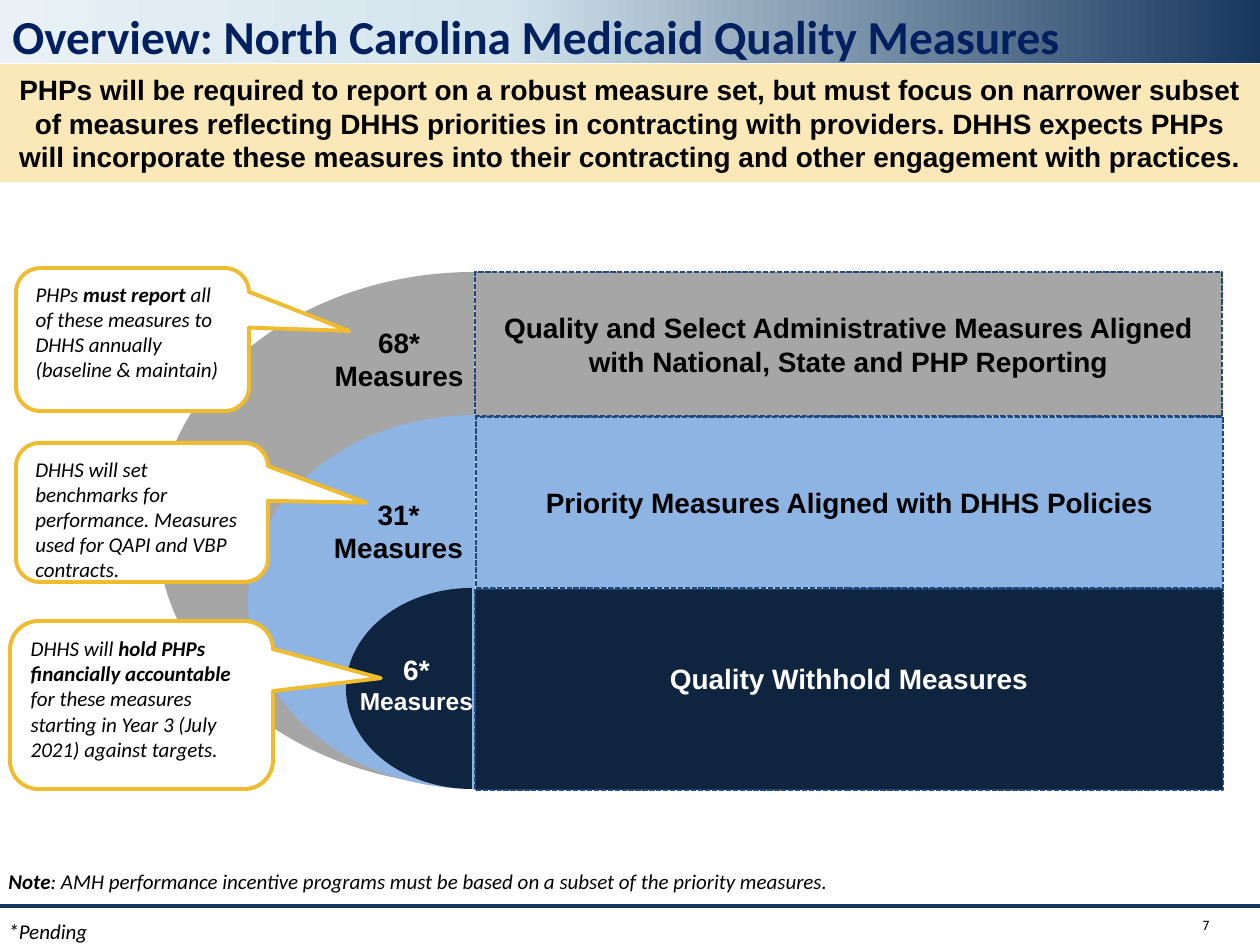
"""Build the slide on Medicaid quality measures, with nested half-circles and callouts."""
import pptx
import pptx.util
import pptx.dml.color
import pptx.enum.dml
import pptx.enum.shapes
import pptx.enum.text
import lxml.etree

PX = 914400 / 126
COLORS = {"navy": "17375E", "title": "002060", "cream": "FAE8B8", "gold": "EFBB2F",
          "gray": "A6A6A6", "sky": "8EB4E3", "midnight": "0F243E", "edge": "1F497D",
          "haze": "D3E4ED", "mist": "E9F1F6", "black": "000000", "white": "FFFFFF"}
RGB = {name: pptx.dml.color.RGBColor.from_string(code) for name, code in COLORS.items()}
KIND = pptx.enum.shapes.MSO_SHAPE
ALIGN = pptx.enum.text.PP_ALIGN
ANCHOR = pptx.enum.text.MSO_ANCHOR

deck = pptx.Presentation()
deck.slide_width, deck.slide_height = round(1260 * PX), round(945 * PX)
slide = deck.slides.add_slide(deck.slide_layouts[6])


def draw(kind, box, fill, adjustments=()):
    emu = [round(length * PX) for length in box]
    if kind is None:
        return slide.shapes.add_textbox(*emu)
    shape = slide.shapes.add_shape(kind, *emu)
    shape.shadow.inherit = False
    shape.line.fill.background()
    shape.fill.solid()
    shape.fill.fore_color.rgb = RGB[fill]
    for index, value in enumerate(adjustments):
        shape.adjustments[index] = value
    return shape


def write(shape, paragraphs, size, color="black", face="Arial", align=ALIGN.CENTER,
          anchor=ANCHOR.TOP, bold=None, italic=None):
    frame = shape.text_frame
    frame.word_wrap = True
    frame.vertical_anchor = anchor
    for index, runs in enumerate(paragraphs):
        paragraph = frame.add_paragraph() if index else frame.paragraphs[0]
        paragraph.alignment = align
        font = paragraph.font
        font.size, font.name = pptx.util.Pt(size), face
        font.bold, font.italic = bold, italic
        font.color.rgb = RGB[color]
        for text, emphasis in runs:
            run = paragraph.add_run()
            run.text = text
            if emphasis:
                run.font.bold = True
    return frame


header = draw(KIND.RECTANGLE, (0, 0, 1260, 63), "navy")
header.fill.gradient()
header.fill.gradient_angle = 180
stops = header.fill._fill._gradFill.gsLst
for stop in list(stops):
    stops.remove(stop)
for position, name in ((0, "navy"), (60, "haze"), (100, "mist")):
    stop = lxml.etree.SubElement(stops, pptx.oxml.ns.qn("a:gs"), pos=str(position * 1000))
    lxml.etree.SubElement(stop, pptx.oxml.ns.qn("a:srgbClr"), val=COLORS[name])

footer_y = round(906 * PX)
footer_rule = slide.shapes.add_connector(
    pptx.enum.shapes.MSO_CONNECTOR.STRAIGHT, 0, footer_y, deck.slide_width, footer_y)
footer_rule.line.color.rgb = RGB["navy"]
footer_rule.line.width = pptx.util.Pt(2.25)
lxml.etree.SubElement(footer_rule._element.spPr, pptx.oxml.ns.qn("a:effectLst"))

for half_circle, fill in (((157, 272, 635, 514), "gray"), ((248, 415, 454, 374), "sky"),
                          ((346, 588, 252, 201), "midnight")):
    draw(KIND.PIE, half_circle, fill, (54, 162))

bands = (
    ((475, 272, 747, 144), "gray", "black", 0,
     "Quality and Select Administrative Measures Aligned with National, State and PHP Reporting"),
    ((476, 417, 747, 171), "sky", "black", 0, "Priority Measures Aligned with DHHS Policies"),
    ((475, 589, 748, 201), "midnight", "white", 22, "Quality Withhold Measures"),
)
for box, fill, ink, lift, label in bands:
    band = draw(KIND.RECTANGLE, box, fill)
    band.line.color.rgb = RGB["edge"]
    band.line.width = pptx.util.Pt(1)
    band.line.dash_style = pptx.enum.dml.MSO_LINE.SQUARE_DOT
    frame = write(band, [[(label, False)]], 16, ink, anchor=ANCHOR.MIDDLE, bold=True)
    frame.margin_bottom = round((6 + lift) * PX)

for box, count, ink, unit_size in (((346, 646, 141, 77), "6*", "white", 14),
                                   ((309, 491, 179, 81), "31*", "black", 16),
                                   ((312, 319, 174, 81), "68*", "black", 16)):
    frame = write(draw(None, box, None), [[(count, False)], [("Measures", False)]],
                  16, ink, bold=True)
    frame.paragraphs[1].font.size = pptx.util.Pt(unit_size)

write(draw(None, (1144, 906, 78, 39), None), [[("7", False)]], 7.5, face="Cabin",
      align=ALIGN.RIGHT, anchor=ANCHOR.MIDDLE)
title = write(draw(None, (0, -6, 1086, 91), None),
              [[("Overview: North Carolina Medicaid Quality Measures", False)]],
              27, "title", "Calibri", ALIGN.LEFT, ANCHOR.MIDDLE, bold=True)
title.paragraphs[0].line_spacing = 0.9

write(draw(KIND.RECTANGLE, (0, 64, 1260, 118), "cream"), [[(
    "PHPs will be required to report on a robust measure set, but must focus on narrower "
    "subset of measures reflecting DHHS priorities in contracting with providers. DHHS "
    "expects PHPs will incorporate these measures into their contracting and other "
    "engagement with practices.", False)]], 16, anchor=ANCHOR.MIDDLE, bold=True)

callouts = (
    ((16, 268, 233, 143), (0.93, -0.06),
     [("PHPs ", False), ("must report ", True),
      ("all of these measures to DHHS annually (baseline & maintain)", False)]),
    ((16, 443, 252, 139), (0.89, -0.07),
     [("DHHS will set benchmarks for performance. Measures used for QAPI and VBP contracts.",
       False)]),
    ((10, 621, 263, 168), (0.91, -0.16),
     [("DHHS will ", False), ("hold PHPs financially accountable ", True),
      ("for these measures starting in Year 3 (July 2021) against targets.", False)]),
)
for box, tip, runs in callouts:
    callout = draw(KIND.ROUNDED_RECTANGULAR_CALLOUT, box, "white", tip + (0.17,))
    callout.line.color.rgb = RGB["gold"]
    callout.line.width = pptx.util.Pt(2.25)
    write(callout, [runs], 12, face="Calibri", align=ALIGN.LEFT, italic=True)

notes = write(draw(None, (-4, 862, 1002, 89), None), [
    [("Note", True), (": AMH performance incentive programs must be based on a subset of "
                      "the priority measures.", False)],
    [("*Pending", False)]], 12, face="Calibri", align=ALIGN.LEFT, italic=True)
notes.paragraphs[1].space_before = pptx.util.Pt(14.5)

deck.save("out.pptx")
